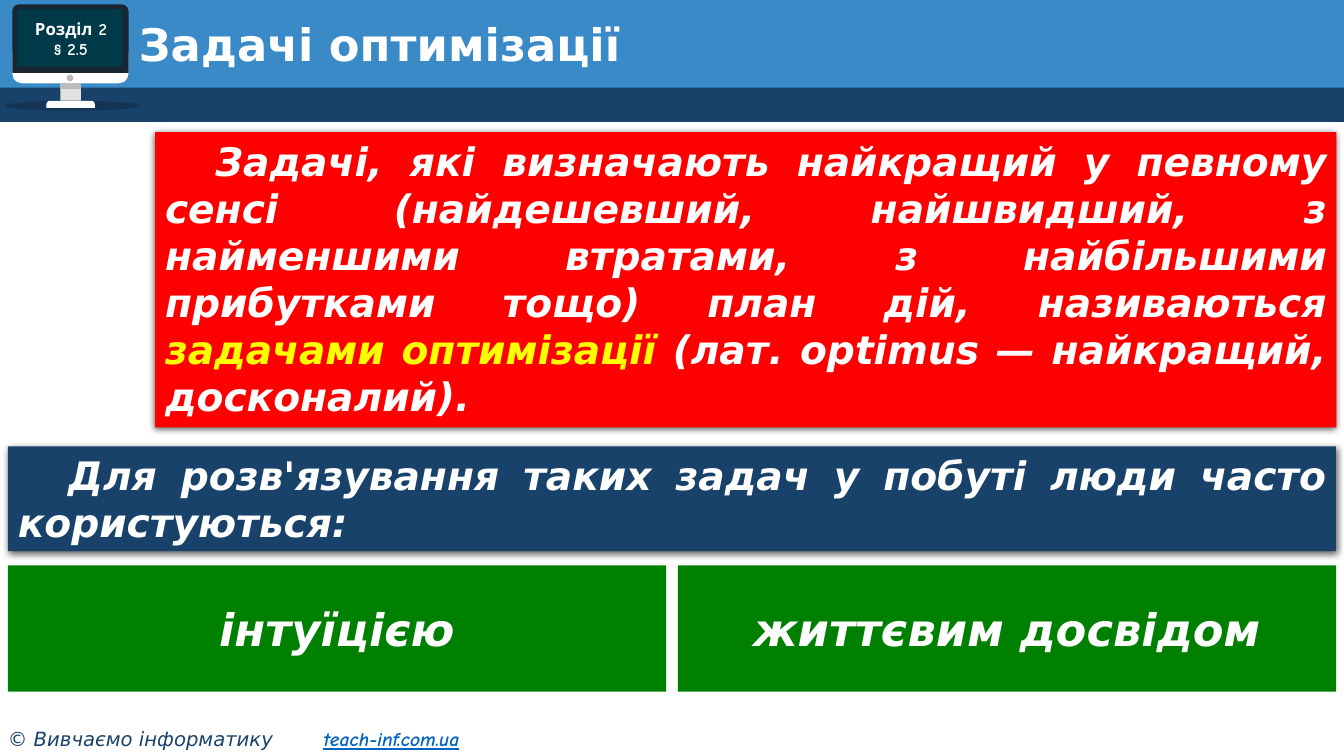
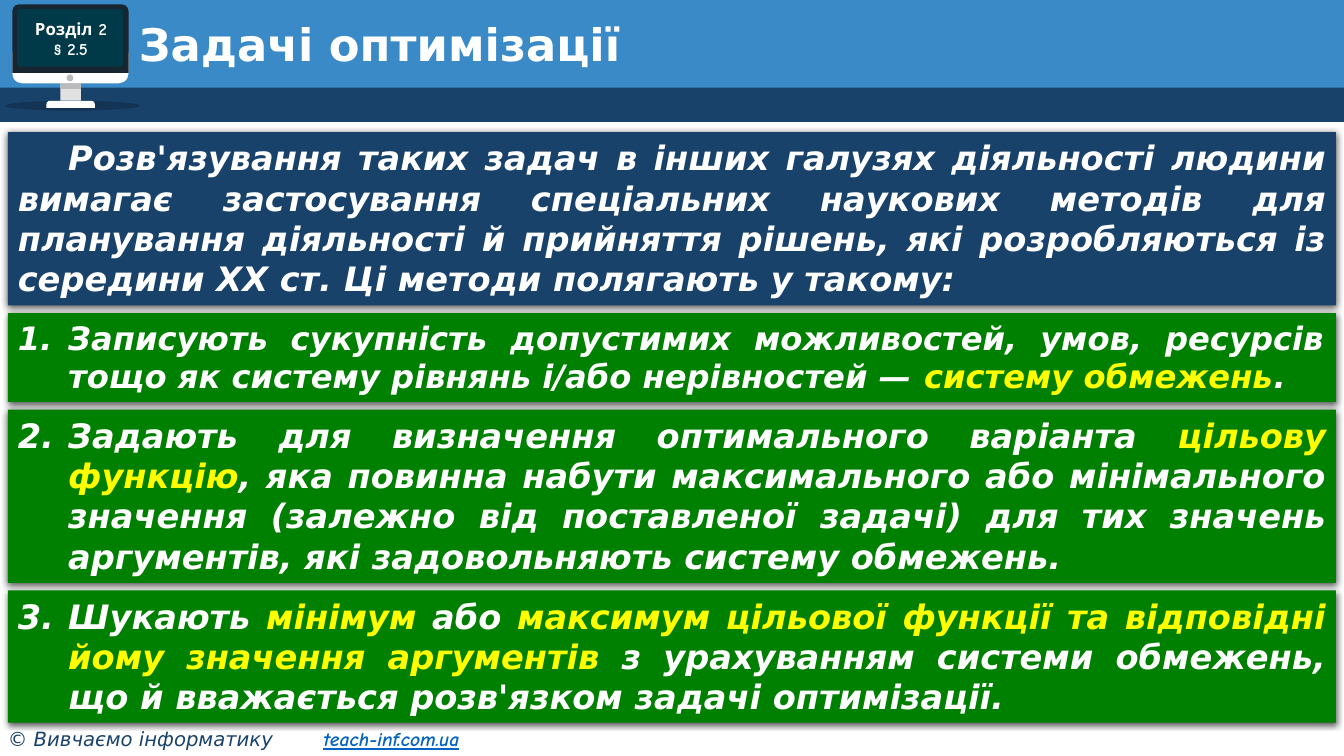
from lxml.etree import SubElement as Sub
from pptx import Presentation
from pptx.dml.color import RGBColor as RGB
from pptx.enum.shapes import MSO_SHAPE as Kind
from pptx.enum.text import MSO_ANCHOR as Anchor, PP_ALIGN as Align
from pptx.oxml.ns import qn
from pptx.util import Cm, Pt

HUE = {
    "sky": "398AC7", "navy": "19426B", "red": "FF0000", "green": "008000",
    "white": "FFFFFF", "yellow": "FFFF00", "link": "0563C1", "black": "000000",
    "case": "182632", "screen": "003948", "neck": "E1E1E1", "grey": "BBBBBB",
}
SANS, COMIC = "DejaVu Sans", "Comic Neue"
WIDE, HIGH = 33.87, 19.05
EDGE = 0.2
FULL = WIDE - 2 * EDGE
STEP = 1.27  # first-line indent and number indent


def block(slide, at, hue, kind=Kind.RECTANGLE, adj=None, shade=False):
    """Add a filled shape without outline, with a soft shadow if asked."""
    shape = slide.shapes.add_shape(kind, *map(Cm, at))
    shape.fill.solid()
    shape.fill.fore_color.rgb = RGB.from_string(HUE[hue])
    shape.line.fill.background()
    shape.shadow.inherit = False
    if adj is not None:
        shape.adjustments[0] = adj
    if shade:
        glow = Sub(shape.element.spPr.find(qn("a:effectLst")), qn("a:outerShdw"),
                   blurRad=str(Pt(4.5)), dist=str(Pt(1.5)), dir="5400000",
                   algn="t", rotWithShape="0")
        tint = Sub(glow, qn("a:srgbClr"), val=HUE["black"])
        Sub(tint, qn("a:alpha"), val="63000")
    return shape


def write(shape, text, size, align=Align.JUSTIFY, face=SANS, slant=True,
          left=0, first=0, num=None, mid=False):
    """Fill a shape with bold white text; parts between bars are yellow."""
    frame = shape.text_frame
    frame.word_wrap = True
    frame.vertical_anchor = Anchor.MIDDLE if mid else Anchor.TOP
    for n, line in enumerate(text.split("\n")):
        para = frame.add_paragraph() if n else frame.paragraphs[0]
        props = para._p.get_or_add_pPr()
        props.set("marL", str(Cm(left)))
        props.set("indent", str(Cm(first)))
        if num:
            Sub(props, qn("a:buAutoNum"), type="arabicPeriod", startAt=str(num))
        para.alignment = align
        font = para.font
        font.name, font.size = face, Pt(size)
        font.bold, font.italic = True, slant
        font.color.rgb = RGB.from_string(HUE["white"])
        for i, part in enumerate(line.split("|")):
            run = para.add_run()
            run.text = part
            if i % 2:
                run.font.color.rgb = RGB.from_string(HUE["yellow"])


deck = Presentation()
deck.slide_width, deck.slide_height = Cm(WIDE), Cm(HIGH)
pages = [deck.slides.add_slide(deck.slide_layouts[6]) for _ in range(2)]

# Shared header, computer and footer
for page in pages:
    block(page, (0, 0, WIDE, 2.31), "sky")
    block(page, (0, 2.21, WIDE, 0.86), "navy")

    floor = block(page, (0.13, 2.54, 3.4, 0.25), "black", Kind.OVAL)
    Sub(floor.element.spPr.find(".//" + qn("a:srgbClr")), qn("a:alpha"), val="20000")
    for at, hue, kind, adj in (
        ((0.31, 1.1, 2.93, 1), "white", Kind.ROUNDED_RECTANGLE, 0.25),
        ((0.31, 0.11, 2.93, 1.73), "case", Kind.ROUND_2_SAME_RECTANGLE, 0.1),
        ((1.52, 2.1, 0.52, 0.44), "neck", Kind.RECTANGLE, None),
        ((1.52, 2.1, 0.52, 0.14), "grey", Kind.RECTANGLE, None),
        ((1.17, 2.54, 1.22, 0.18), "white", Kind.ROUND_2_SAME_RECTANGLE, 0.5),
        ((1.68, 1.88, 0.17, 0.17), "grey", Kind.OVAL, None),
        ((0.43, 0.23, 2.67, 1.45), "screen", Kind.ROUNDED_RECTANGLE, 0.04),
    ):
        block(page, at, hue, kind, adj)

    foot = page.shapes.add_textbox(*map(Cm, (-0.05, 18.19, 13.28, 0.86)))
    foot.text_frame.word_wrap = True
    para = foot.text_frame.paragraphs[0]
    tabs = Sub(para._p.get_or_add_pPr(), qn("a:tabLst"))
    Sub(tabs, qn("a:tab"), pos=str(Cm(7.95)), algn="l")
    para.font.size, para.font.italic = Pt(14), True
    for text, face, hue, site in (
        ("© Вивчаємо інформатику\t", SANS, "navy", False),
        ("teach-inf.com.ua", COMIC, "link", True),
    ):
        run = para.add_run()
        run.text = text
        run.font.name = face
        run.font.bold = run.font.underline = site
        run.font.color.rgb = RGB.from_string(HUE[hue])

    label = page.shapes.add_textbox(*map(Cm, (0.33, 0.23, 2.92, 1.5)))
    write(label, "Розділ 2\n§ 2.5", 12, Align.CENTER, COMIC, slant=False, mid=True)
    title = page.shapes.add_textbox(*map(Cm, (3.25, 0.46, 25.15, 1.47)))
    write(title, "Задачі оптимізації", 32, Align.LEFT, slant=False, mid=True)
    title.text_frame.paragraphs[0].line_spacing = 0.9

# Slide 1: definition, lead-in and two answers
page = pages[0]
for at, hue, text in (
    ((EDGE, 11.25, FULL, 2.64), "navy",
     "Для розв'язування таких задач у побуті люди часто користуються:"),
    ((3.91, 3.33, 29.77, 7.44), "red",
     "Задачі, які визначають найкращий у певному сенсі (найдешевший, "
     "найшвидший, з найменшими втратами, з найбільшими прибутками тощо) "
     "план дій, називаються |задачами оптимізації |"
     "(лат. optimus — найкращий, досконалий)."),
):
    write(block(page, at, hue, shade=True), text, 28, first=STEP)

gap = 0.3
half = (FULL - gap) / 2
for i, text in enumerate(("інтуїцією", "життєвим досвідом")):
    card = block(page, (EDGE + i * (half + gap), 14.25, half, 3.18), "green")
    write(card, text, 32, Align.CENTER, mid=True)

# Slide 2: lead-in and three numbered steps, stacked
page = pages[1]
top = 3.33
for num, (high, size, text) in enumerate((
    (4.37, 24,
     "Розв'язування таких задач в інших галузях діяльності людини вимагає "
     "застосування спеціальних наукових методів для планування діяльності й "
     "прийняття рішень, які розробляються із середини XX ст. Ці методи "
     "полягають у такому:"),
    (2.24, 23,
     "Записують сукупність допустимих можливостей, умов, ресурсів тощо як "
     "систему рівнянь і/або нерівностей — |систему обмежень|."),
    (4.37, 24,
     "Задають для визначення оптимального варіанта |цільову функцію|, яка "
     "повинна набути максимального або мінімального значення (залежно від "
     "поставленої задачі) для тих значень аргументів, які задовольняють "
     "систему обмежень."),
    (3.33, 24,
     "Шукають |мінімум| або |максимум цільової функції та відповідні йому "
     "значення аргументів| з урахуванням системи обмежень, що й вважається "
     "розв'язком задачі оптимізації."),
)):
    bar = block(page, (EDGE, top, FULL, high), "green" if num else "navy", shade=True)
    if num:
        write(bar, text, size, left=STEP, first=-STEP, num=num)
    else:
        write(bar, text, size, first=STEP)
    top += high + 0.19

deck.save("out.pptx")
